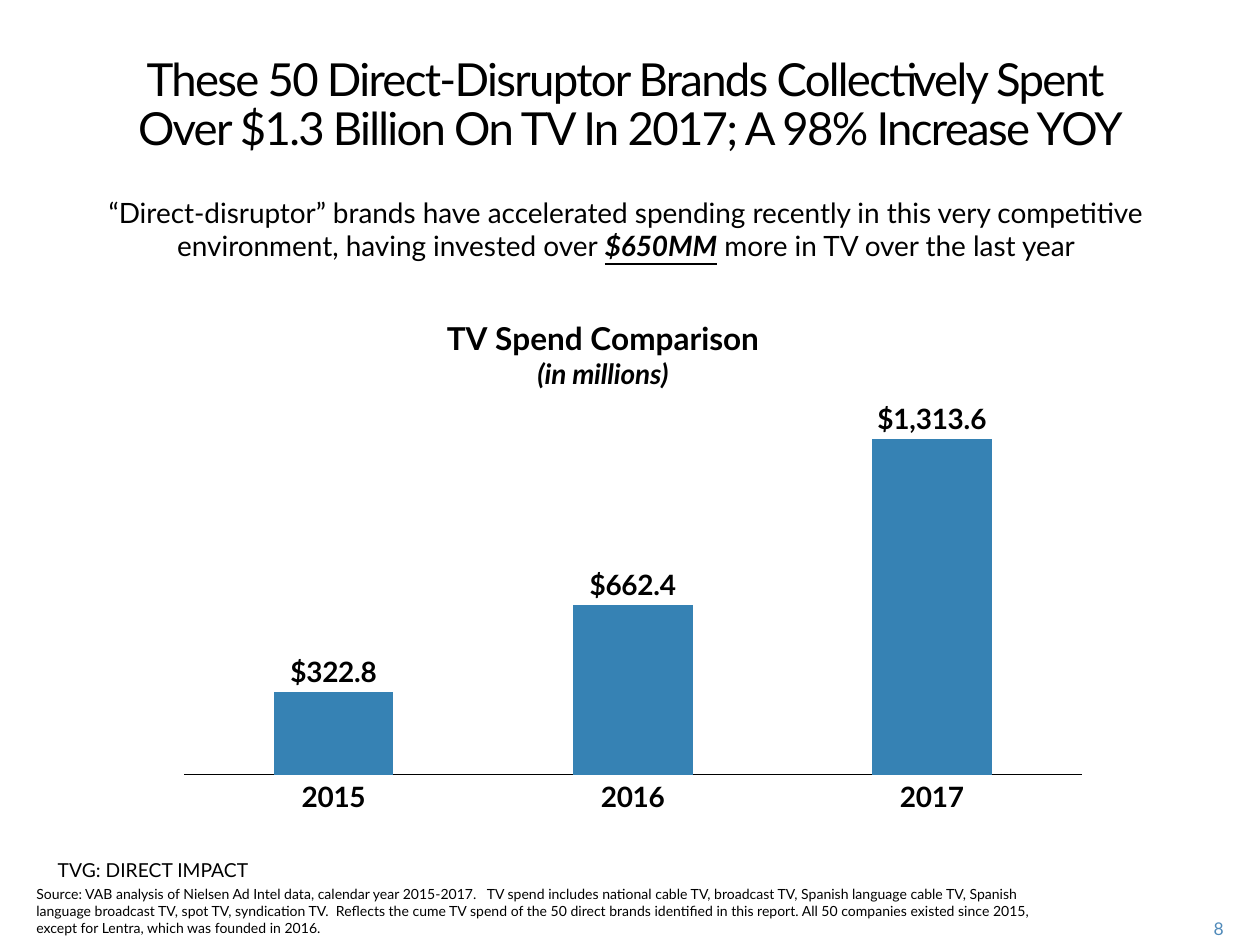
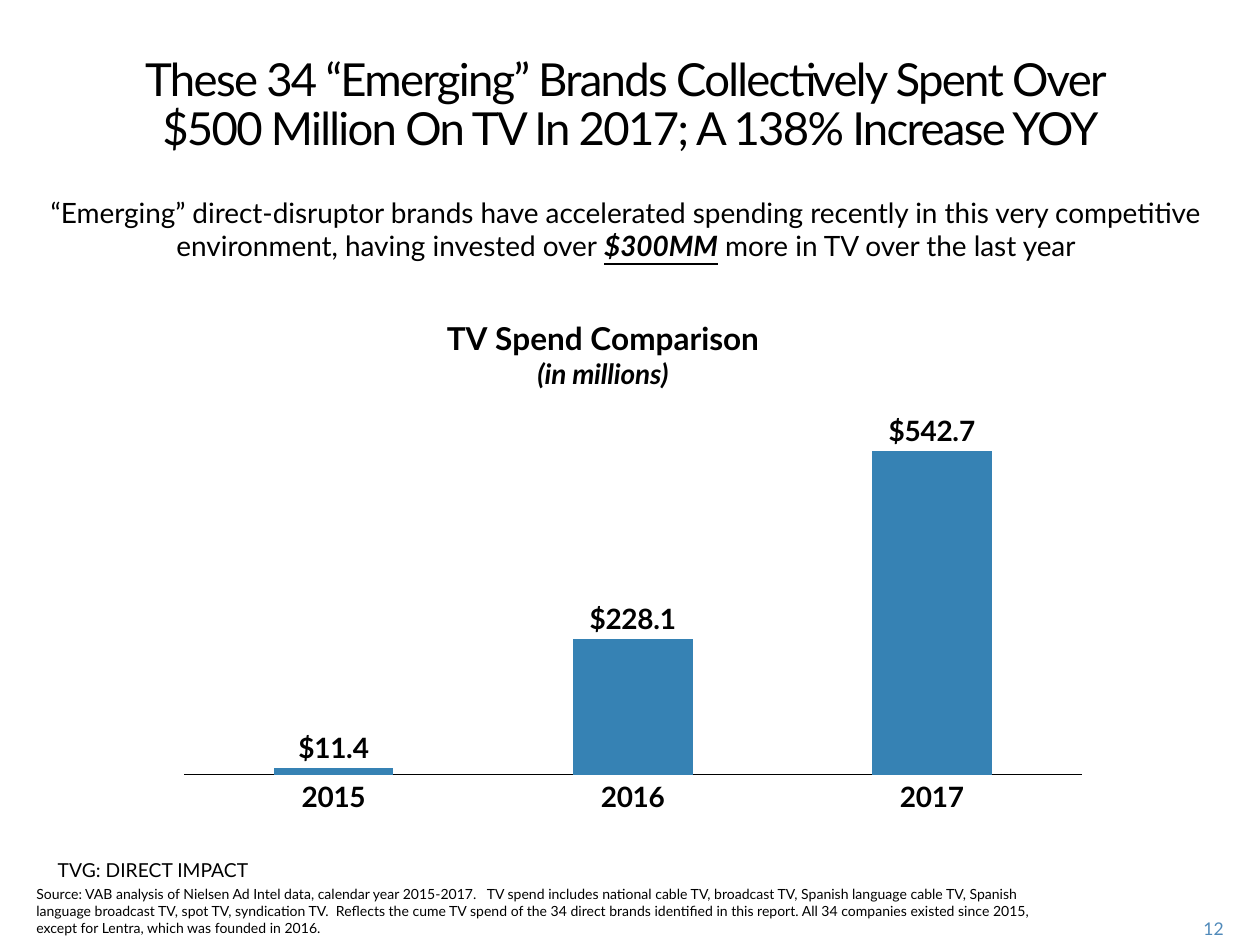
from copy import deepcopy

from pptx import Presentation
from pptx.chart.data import CategoryChartData
from pptx.dml.color import RGBColor
from pptx.enum.chart import XL_CHART_TYPE, XL_TICK_MARK
from pptx.enum.text import PP_ALIGN
from pptx.oxml import parse_xml
from pptx.oxml.ns import nsdecls, qn
from pptx.util import Pt

STACKED = XL_CHART_TYPE.COLUMN_STACKED
NO_TICKS = XL_TICK_MARK.NONE
LEFT, CENTER, RIGHT = PP_ALIGN.LEFT, PP_ALIGN.CENTER, PP_ALIGN.RIGHT

BLACK = RGBColor(0x00, 0x00, 0x00)
BAR_BLUE = RGBColor(0x36, 0x82, 0xB4)
PAGE_BLUE = RGBColor(0x50, 0x8A, 0xBA)
FONT = "Lato"
DOLLARS = '"$"#,##0.0'
EMU_PER_PX = 9144  # 100 px to the inch

# Shares of the chart frame
PLOT = {"x": 0.019, "y": 0.215, "w": 0.96, "h": 0.692}
TITLE_CORNER = {"x": 0.296, "y": 0.013}
LABEL_RISE = 0.04

YEARS = ["2015", "2016", "2017"]
STORIES = [
    {
        "page": 8,
        "title": ["These 50 Direct-Disruptor Brands Collectively Spent ",
                  "Over $1.3 Billion On TV In 2017; A 98% Increase YOY"],
        "subject": "“Direct-disruptor” brands",
        "growth": "$650MM",
        "brands": 50,
        "spend": [322.8, 662.4, 1313.6],
        "axis_top": 1400,
    },
    {
        "page": 12,
        "title": ["These 34 “Emerging” Brands Collectively Spent Over ",
                  "$500 Million On TV In 2017; A 138% Increase YOY"],
        "subject": "“Emerging” direct-disruptor brands",
        "growth": "$300MM",
        "brands": 34,
        "spend": [11.4, 228.1, 542.7],
        "axis_top": 600,
    },
]


def px(*lengths):
    return [length * EMU_PER_PX for length in lengths]


def manual_layout(shares, inner=False):
    """Return a c:layout element; shares are fractions of the chart frame."""
    target = '<c:layoutTarget val="inner"/>' if inner else ""
    modes = "".join(f'<c:{axis}Mode val="edge"/>' for axis in "xy")
    values = "".join(f'<c:{key} val="{value}"/>' for key, value in shares.items())
    return parse_xml(f'<c:layout {nsdecls("c")}><c:manualLayout>'
                     f"{target}{modes}{values}</c:manualLayout></c:layout>")


def replace_layout(parent, index, layout):
    for old in parent.findall(qn("c:layout")):
        parent.remove(old)
    parent.insert(index, layout)


def raise_labels(labels, spend, axis_top):
    """Move each label from the middle of its bar to just above it."""
    labels.find(qn("c:showLeaderLines")).set("val", "0")
    shared = [child for child in labels if child.tag != qn("c:showLeaderLines")]
    for index, value in enumerate(spend):
        rise = round(value / axis_top * PLOT["h"] / 2 + LABEL_RISE, 3)
        label = parse_xml(
            f'<c:dLbl {nsdecls("c")}><c:idx val="{index}"/><c:layout><c:manualLayout>'
            f'<c:x val="0"/><c:y val="{-rise}"/></c:manualLayout></c:layout></c:dLbl>')
        for child in shared:
            label.append(deepcopy(child))
        labels.insert(index, label)


class SpendDeck:
    def __init__(self):
        self.deck = Presentation()
        self.deck.slide_width, self.deck.slide_height = px(1000, 750)
        self.page = None

    def new_page(self):
        self.page = self.deck.slides.add_slide(self.deck.slide_layouts[6])

    def style(self, font, size, color=BLACK, bold=False, italic=False):
        font.name = FONT
        font.size = Pt(size)
        font.color.rgb = color
        font.bold = bold
        font.italic = italic

    def span(self, para, text, size, **look):
        span = para.add_run()
        span.text = text
        self.style(span.font, size, **look)
        return span

    def text_box(self, frame, align=LEFT):
        """Add a wrapping box and return its first paragraph."""
        box = self.page.shapes.add_textbox(*px(*frame))
        box.text_frame.word_wrap = True
        para = box.text_frame.paragraphs[0]
        para.alignment = align
        return para

    def title(self, lines):
        para = self.text_box((19, 40, 963, 65), CENTER)
        para.line_spacing = Pt(28)
        for number, line in enumerate(lines):
            if number:
                para.add_line_break()
            span = self.span(para, line, 26)
            span.font._element.set("spc", "-100")

    def subtitle(self, subject, growth):
        para = self.text_box((19, 150, 956, 65), CENTER)
        self.span(para, f"{subject} have accelerated spending recently in this very "
                        "competitive environment, having invested over ", 16)
        self.span(para, growth, 16, bold=True, italic=True).font.underline = True
        self.span(para, " more in TV over the last year", 16)

    def spend_chart(self, spend, axis_top):
        data = CategoryChartData(number_format=DOLLARS)
        data.categories = YEARS
        data.add_series("Series 1", spend)
        frame = self.page.shapes.add_chart(STACKED, *px(132, 243, 742, 410), data)
        chart = frame.chart
        self.style(chart.font, 10)
        chart.has_legend = False

        heading = chart.chart_title.text_frame
        self.span(heading.paragraphs[0], "TV Spend Comparison", 18, bold=True)
        self.span(heading.add_paragraph(), "(in millions)", 16, bold=True, italic=True)

        years = chart.category_axis
        years.major_tick_mark = years.minor_tick_mark = NO_TICKS
        years.format.line.color.rgb = BLACK
        years.format.line.width = Pt(0.75)
        self.style(years.tick_labels.font, 16, bold=True)

        dollars = chart.value_axis
        dollars.minimum_scale, dollars.maximum_scale = 0, axis_top
        dollars.has_major_gridlines = False
        dollars.visible = False

        plot = chart.plots[0]
        plot.gap_width, plot.overlap = 150, 100
        plot.vary_by_categories = False
        bars = plot.series[0]
        bars.format.fill.solid()
        bars.format.fill.fore_color.rgb = BAR_BLUE
        labels = bars.data_labels
        labels.show_value = True
        labels.number_format = DOLLARS
        labels.number_format_is_linked = False
        self.style(labels.font, 16, bold=True)

        root = chart._chartSpace
        raise_labels(root.xpath(".//c:ser/c:dLbls")[0], spend, axis_top)
        replace_layout(root.xpath(".//c:plotArea")[0], 0, manual_layout(PLOT, inner=True))
        replace_layout(root.xpath("./c:chart/c:title")[0], 1, manual_layout(TITLE_CORNER))

    def footer(self, brands, page_number):
        self.span(self.text_box((36, 676, 285, 47)), "TVG: DIRECT IMPACT", 11)
        self.span(
            self.text_box((19, 698, 817, 40)),
            "Source: VAB analysis of Nielsen Ad Intel data, calendar year 2015-2017.   "
            "TV spend includes national cable TV, broadcast TV, Spanish language cable TV, "
            "Spanish language broadcast TV, spot TV, syndication TV.  Reflects the cume TV "
            f"spend of the {brands} direct brands identified in this report. All {brands} "
            "companies existed since 2015, except for Lentra, which was founded in 2016.", 8)
        self.span(self.text_box((920, 724, 61, 25), RIGHT), str(page_number), 10,
                  color=PAGE_BLUE)


def main():
    slides = SpendDeck()
    for story in STORIES:
        slides.new_page()
        slides.title(story["title"])
        slides.subtitle(story["subject"], story["growth"])
        slides.spend_chart(story["spend"], story["axis_top"])
        slides.footer(story["brands"], story["page"])
    slides.deck.save("out.pptx")


if __name__ == "__main__":
    main()
